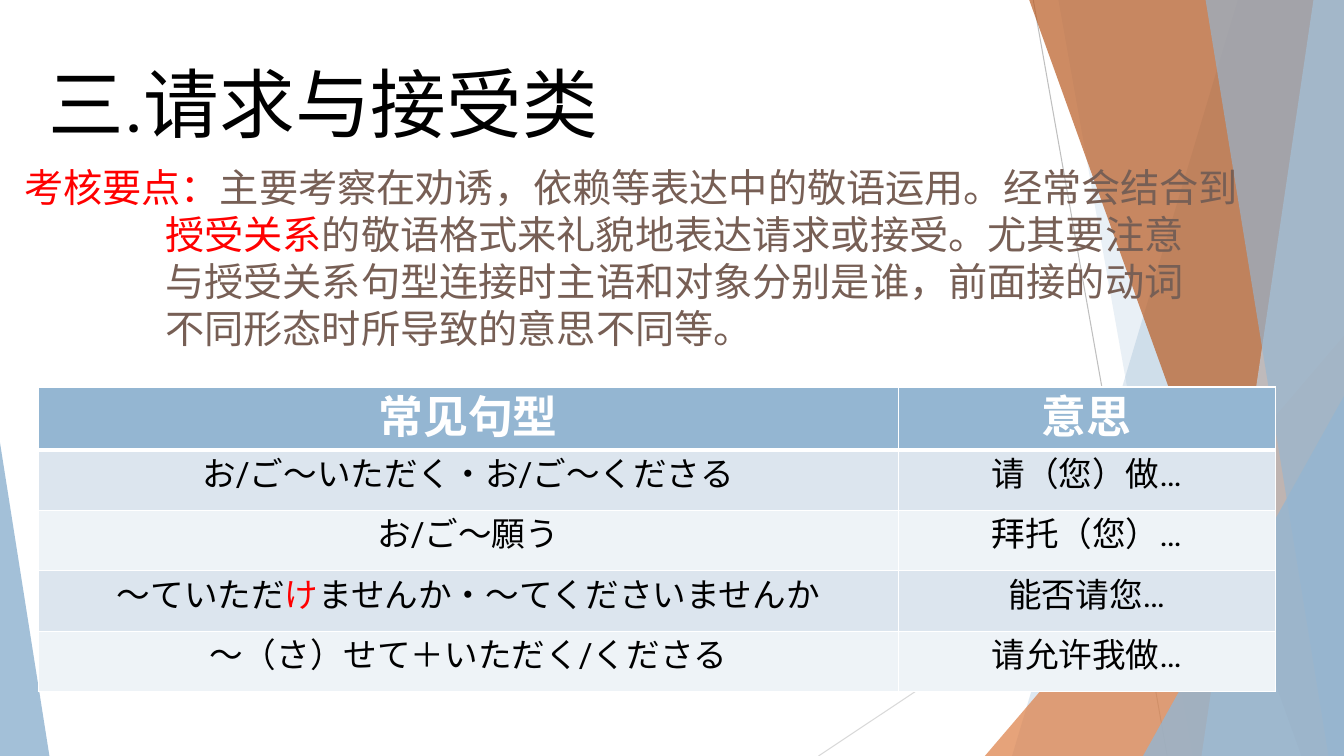
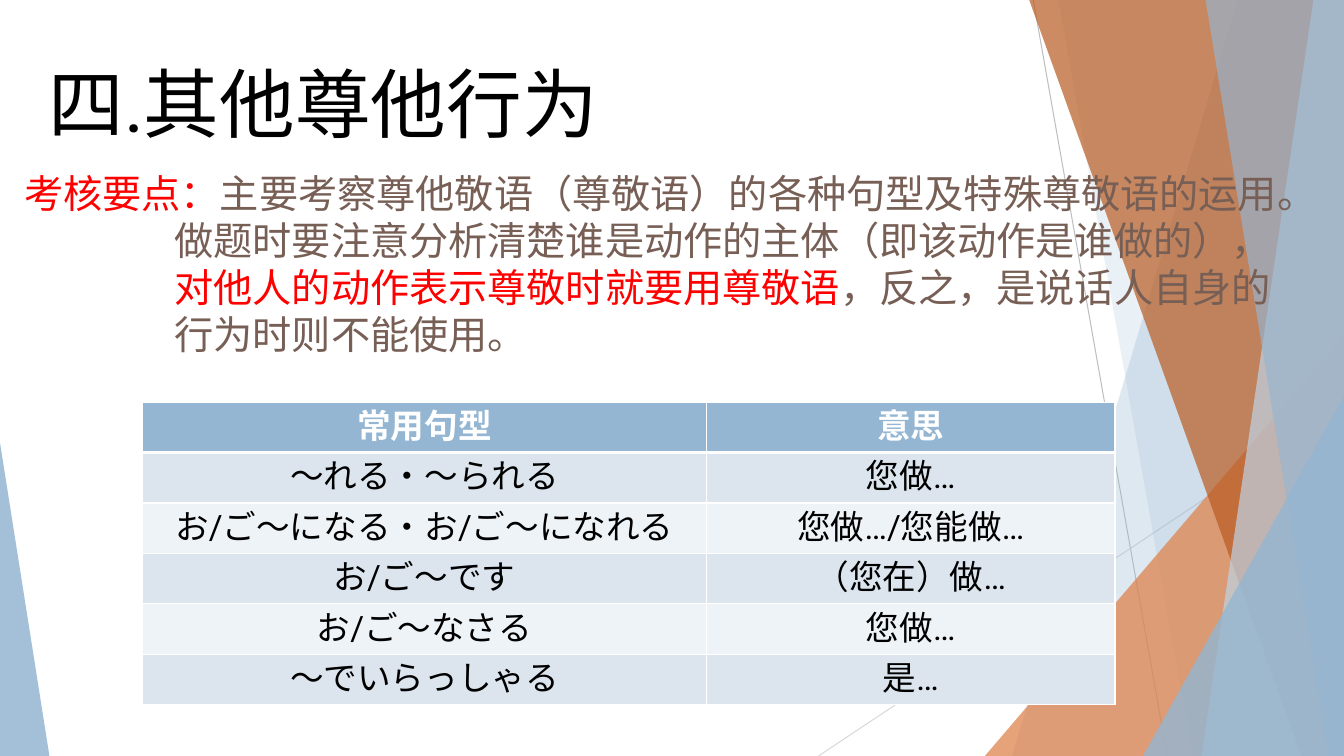
from dataclasses import dataclass

from lxml import etree
from pptx import Presentation
from pptx import util as u
from pptx.dml.color import RGBColor
from pptx.enum import shapes, text
from pptx.oxml.ns import qn

WIDTH, HEIGHT = u.Inches(13.33), u.Inches(7.5)
# The grid has 100 columns and 100 rows.
COLUMN, ROW = WIDTH / 100, HEIGHT / 100

FONT = "Roboto"
WHITE = RGBColor(0xFF, 0xFF, 0xFF)
BLACK = RGBColor(0x00, 0x00, 0x00)
RED = RGBColor(0xFF, 0x00, 0x00)
BROWN = RGBColor(0x77, 0x5F, 0x55)
BLUE = RGBColor(0x94, 0xB6, 0xD2)
LIGHT_BLUE = RGBColor(0xBF, 0xD3, 0xE4)
ORANGE = RGBColor(0xDD, 0x80, 0x47)
DARK_ORANGE = RGBColor(0xB9, 0x5B, 0x22)
GREY = RGBColor(0xBF, 0xBF, 0xBF)
LIGHT_GREY = RGBColor(0xD9, 0xD9, 0xD9)
ROW_FILLS = (RGBColor(0xDC, 0xE5, 0xEE), RGBColor(0xEE, 0xF3, 0xF7))

TITLE_SIZE, BODY_SIZE, CELL_SIZE = 54, 28, 24


def across(columns):
    return u.Emu(round(columns * COLUMN))


def down(rows):
    return u.Emu(round(rows * ROW))


@dataclass
class Box:
    """A region in grid columns and rows."""
    left: float
    top: float
    width: float
    height: float

    def lengths(self):
        return (across(self.left), down(self.top),
                across(self.width), down(self.height))

    def place(self, shape):
        shape.left, shape.top, shape.width, shape.height = self.lengths()


TITLE_BOX = Box(2.85, 6.8, 45.08, 13.47)


def add_line(group, start, end, color):
    line = group.shapes.add_connector(
        shapes.MSO_CONNECTOR.STRAIGHT,
        across(start[0]), down(start[1]), across(end[0]), down(end[1]))
    line.line.color.rgb = color
    line.line.width = u.Pt(0.75)
    etree.SubElement(line.element.spPr, qn("a:effectLst"))


def paint(shape, color, opacity):
    """Fill a shape with a partly transparent colour and no outline."""
    shape.shadow.inherit = False
    shape.fill.solid()
    shape.fill.fore_color.rgb = color
    shape.line.fill.background()
    solid = shape.element.spPr.find(qn("a:solidFill"))
    etree.SubElement(solid[0], qn("a:alpha"), val=str(opacity * 1000))


def add_band(group, top_x, bottom_x, color, opacity):
    """Add a slanted band that fills the slide to its right edge."""
    builder = group.shapes.build_freeform(across(top_x), 0)
    builder.add_line_segments(
        [(WIDTH, 0), (WIDTH, HEIGHT), (across(bottom_x), HEIGHT)], close=True)
    paint(builder.convert_to_shape(), color, opacity)


def add_corner(group, box, apex, color, opacity):
    """Add a right triangle; apex 0 is at its left and 1 at its right."""
    triangle = group.shapes.add_shape(
        shapes.MSO_SHAPE.ISOSCELES_TRIANGLE, *box.lengths())
    triangle.adjustments[0] = apex
    paint(triangle, color, opacity)


def decorate_layout(layout, slide):
    """Draw the facets on a slide and move them behind its layout."""
    group = slide.shapes.add_group_shape()
    add_line(group, (76.88, 0), (86.85, 100), GREY)
    add_line(group, (100, 53.73), (60.9, 100), LIGHT_GREY)
    add_band(group, 92.1, 75.3, BLUE, 30)
    add_band(group, 78.75, 88.73, BLUE, 20)
    add_corner(group, Box(73.28, 44.4, 26.72, 55.6), 1, ORANGE, 72)
    add_band(group, 76.58, 96.83, DARK_ORANGE, 70)
    add_band(group, 97.73, 89.4, LIGHT_BLUE, 70)
    add_band(group, 89.7, 98.85, BLUE, 65)
    add_corner(group, Box(85.05, 52.4, 14.95, 47.6), 1, BLUE, 80)
    add_corner(group, Box(0, 58.53, 3.68, 41.47), 0, BLUE, 85)
    layout.shapes.element.insert(2, group.element)


def add_runs(paragraph, runs, size, color, bold=False):
    """Add plain strings in the given colour and (text, colour) pairs."""
    for item in runs:
        words, run_color = (item, color) if isinstance(item, str) else item
        run = paragraph.add_run()
        run.text = words
        run.font.size = u.Pt(size)
        run.font.bold = bold
        run.font.color.rgb = run_color
        run.font.name = FONT
        etree.SubElement(run.font._element, qn("a:ea"), typeface=FONT)


def prepare_frame(shape, box):
    box.place(shape)
    frame = shape.text_frame
    frame.word_wrap = True
    frame.auto_size = text.MSO_AUTO_SIZE.NONE
    frame.vertical_anchor = text.MSO_ANCHOR.TOP
    return frame


def fill_title(slide, title):
    paragraph = prepare_frame(slide.shapes.title, TITLE_BOX).paragraphs[0]
    paragraph.alignment = text.PP_ALIGN.LEFT
    add_runs(paragraph, [title], TITLE_SIZE, BLACK)


def fill_key_points(slide, box, indent, lines):
    """Fill the body; every line after the first is indented."""
    frame = prepare_frame(slide.placeholders[1], box)
    for index, runs in enumerate(lines):
        paragraph = frame.add_paragraph() if index else frame.paragraphs[0]
        paragraph.space_before = u.Pt(0)
        properties = paragraph._p.get_or_add_pPr()
        properties.set("marL", str(across(indent) if index else 0))
        properties.set("indent", "0")
        etree.SubElement(properties, qn("a:buNone"))
        add_runs(paragraph, runs, BODY_SIZE, BROWN)


def set_borders(cell, top, bottom):
    """Draw white cell borders; top and bottom widths are in points."""
    properties = cell._tc.get_or_add_tcPr()
    sides = (("a:lnL", 1), ("a:lnR", 1), ("a:lnT", top), ("a:lnB", bottom))
    for position, (side, width) in enumerate(sides):
        line = etree.Element(qn(side), w=str(u.Pt(width)))
        solid = etree.SubElement(line, qn("a:solidFill"))
        etree.SubElement(solid, qn("a:srgbClr"), val=str(WHITE))
        properties.insert(position, line)


def add_pattern_table(slide, left, top, columns, header_height, row_height,
                      header_size, rows):
    heights = [header_height] + [row_height] * (len(rows) - 1)
    box = Box(left, top, sum(columns), sum(heights))
    table = slide.shapes.add_table(
        len(rows), len(columns), *box.lengths()).table
    for column, width in zip(table.columns, columns):
        column.width = across(width)
    for index, (row, height, contents) in enumerate(
            zip(table.rows, heights, rows)):
        row.height = down(height)
        header = index == 0
        for cell, runs in zip(row.cells, contents):
            cell.fill.solid()
            cell.fill.fore_color.rgb = (
                BLUE if header else ROW_FILLS[(index - 1) % 2])
            set_borders(cell, 3 if index == 1 else 1, 3 if header else 1)
            paragraph = cell.text_frame.paragraphs[0]
            paragraph.alignment = text.PP_ALIGN.CENTER
            add_runs(paragraph, [runs] if isinstance(runs, str) else runs,
                     header_size if header else CELL_SIZE,
                     WHITE if header else BLACK, header)


def fill_request_slide(slide):
    fill_title(slide, "三.请求与接受类")
    fill_key_points(slide, Box(1.05, 20.93, 92.85, 26.53), 10.5, [
        [("考核要点：", RED),
         "主要考察在劝诱，依赖等表达中的敬语运用。经常会结合到"],
        [("授受关系", RED),
         "的敬语格式来礼貌地表达请求或接受。尤其要注意"],
        ["与授受关系句型连接时主语和对象分别是谁，前面接的动词"],
        ["不同形态时所导致的意思不同等。"],
    ])
    add_pattern_table(slide, 2.85, 51.2, (63.98, 28.05), 8.27, 8, 32, [
        ("常见句型", "意思"),
        ("お/ご～いただく・お/ご～くださる", "请（您）做…"),
        ("お/ご～願う", "拜托（您）…"),
        (["～ていただ", ("け", RED), "ませんか・～てくださいませんか"],
         "能否请您…"),
        ("～（さ）せて＋いただく/くださる", "请允许我做…"),
    ])


def fill_respect_slide(slide):
    fill_title(slide, "四.其他尊他行为")
    fill_key_points(slide, Box(1.05, 21.73, 98.95, 26.53), 11.18, [
        [("考核要点：", RED),
         "主要考察尊他敬语（尊敬语）的各种句型及特殊尊敬语的运用。"],
        ["做题时要注意分析清楚谁是动作的主体（即该动作是谁做的），"],
        [("对他人的动作表示尊敬时就要用尊敬语", RED),
         "，反之，是说话人自身的"],
        ["行为时则不能使用。"],
    ])
    add_pattern_table(slide, 10.58, 53.2, (42, 30.38), 6.67, 6.67, 24, [
        ("常用句型", "意思"),
        ("～れる・～られる", "您做…"),
        ("お/ご～になる・お/ご～になれる", "您做…/您能做…"),
        ("お/ご～です", "（您在）做…"),
        ("お/ご～なさる", "您做…"),
        ("～でいらっしゃる", "是…"),
    ])


def main():
    presentation = Presentation()
    presentation.slide_width, presentation.slide_height = WIDTH, HEIGHT
    layout = presentation.slide_layouts[1]
    request_slide = presentation.slides.add_slide(layout)
    respect_slide = presentation.slides.add_slide(layout)
    decorate_layout(layout, request_slide)
    fill_request_slide(request_slide)
    fill_respect_slide(respect_slide)
    presentation.save("out.pptx")


if __name__ == "__main__":
    main()
